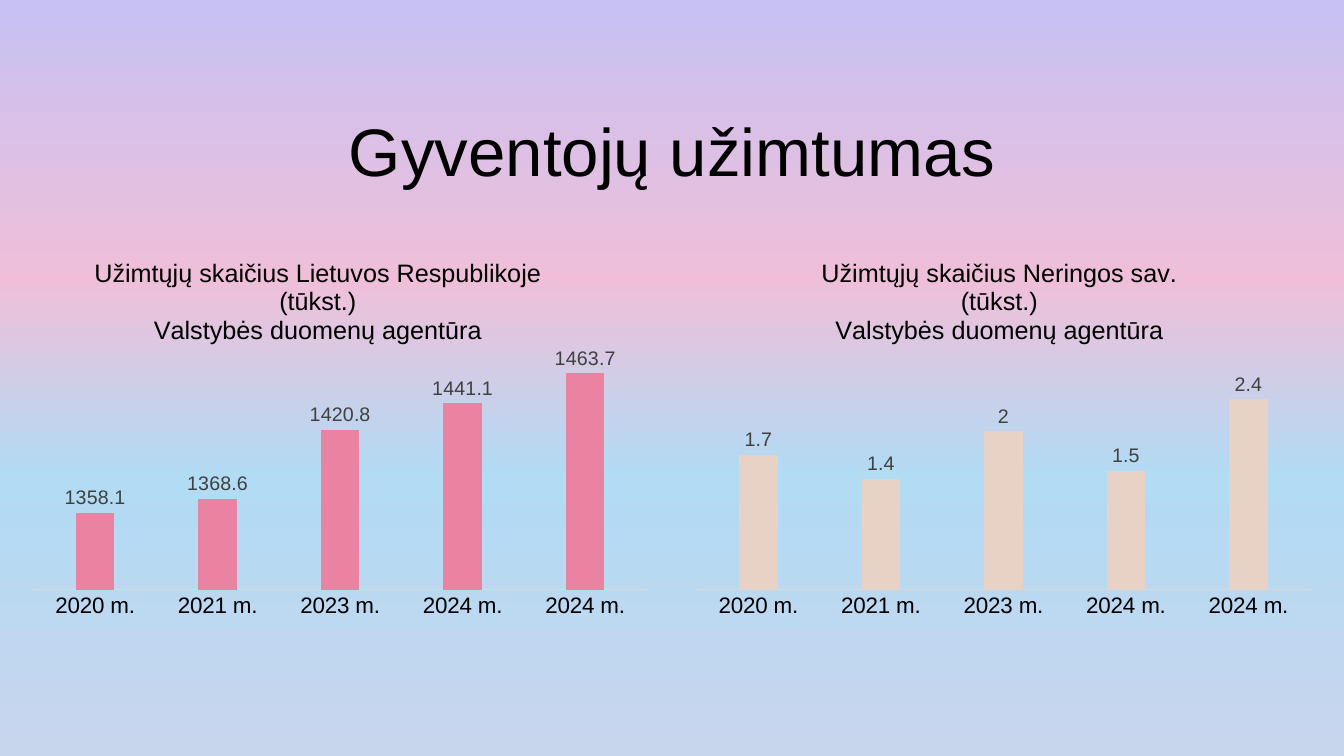
from dataclasses import dataclass

from lxml import etree
from pptx import Presentation
from pptx.chart.data import CategoryChartData
from pptx.dml.color import RGBColor
from pptx.enum.chart import XL_CHART_TYPE, XL_LABEL_POSITION, XL_TICK_MARK
from pptx.enum.text import PP_ALIGN
from pptx.oxml import parse_xml
from pptx.oxml.ns import nsdecls, qn
from pptx.util import Pt

COLUMN = XL_CHART_TYPE.COLUMN_CLUSTERED
OUTSIDE = XL_LABEL_POSITION.OUTSIDE_END
NO_TICK = XL_TICK_MARK.NONE
CENTER = PP_ALIGN.CENTER


@dataclass(frozen=True)
class Theme:
    """Colours, fonts and type sizes of the slide."""
    font: str = "Arial"
    chart_font: str = "Calibri"
    text: str = "000000"
    label: str = "404040"
    axis: str = "D9D9D9"
    pink: str = "EA83A2"
    sand: str = "E8D2C5"
    background: tuple = ((0, "C7C1F4"), (37, "EFBFD9"), (63, "B2DBF4"), (100, "C7D5ED"))
    heading_size: int = 48
    title_size: int = 18
    axis_size: int = 16
    label_size: int = 14
    chart_size: int = 10


T = Theme()
YEARS = ("2020 m.", "2021 m.", "2023 m.", "2024 m.", "2024 m.")
PLOT_BOX = {"x": 0.02, "y": 0.3, "w": 0.96, "h": 0.61}


def set_font(font, size, color=T.text, name=T.font):
    """Set typeface, size and colour without bold."""
    font.name, font.size, font.bold = name, Pt(size), False
    font.color.rgb = RGBColor.from_string(color)


def write(p, text, **fmt):
    """Add formatted centred text to a paragraph."""
    p.alignment = CENTER
    r = p.add_run()
    r.text = text
    set_font(r.font, **fmt)


def set_background(s):
    """Fill the slide with a vertical gradient."""
    fill = s.background.fill
    fill.gradient()
    fill.gradient_angle = 270
    stops = "".join(f'<a:gs pos="{pos * 1000}"><a:srgbClr val="{color}"/></a:gs>'
                    for pos, color in T.background)
    old = next(s.background._cSld.iter(qn("a:gsLst")))
    old.getparent().replace(old, parse_xml(f'<a:gsLst {nsdecls("a")}>{stops}</a:gsLst>'))


def set_layout(parent, index, box, inner=False):
    """Place a chart part by fractions of the chart area."""
    for old in parent.findall(qn("c:layout")):
        parent.remove(old)
    layout = etree.Element(qn("c:layout"))
    manual = etree.SubElement(layout, qn("c:manualLayout"))
    if inner:
        etree.SubElement(manual, qn("c:layoutTarget")).set("val", "inner")
    for key in ("x", "y"):
        etree.SubElement(manual, qn(f"c:{key}Mode")).set("val", "edge")
    for key, value in box.items():
        etree.SubElement(manual, qn(f"c:{key}")).set("val", str(value))
    parent.insert(index, layout)


def add_heading(s, text):
    """Add the slide heading."""
    tf = s.shapes.add_textbox(Pt(75), Pt(68.4), Pt(810), Pt(129.6)).text_frame
    tf.word_wrap = True
    tf.margin_left = tf.margin_right = tf.margin_top = tf.margin_bottom = 0
    p = tf.paragraphs[0]
    p.line_spacing = Pt(67.2)
    write(p, text, size=T.heading_size)


def add_title(chart, lines, x):
    """Add a chart title of several lines."""
    chart.has_title = True
    tf = chart.chart_title.text_frame
    for i, line in enumerate(lines):
        p = tf.paragraphs[0] if i == 0 else tf.add_paragraph()
        write(p, line, size=T.title_size)
    title = chart.chart_title._element
    set_layout(title, 1, {"x": x, "y": 0.05})


def add_columns(s, left, place, values, color, low, high, title_x):
    """Add a column chart of employment in one place."""
    data = CategoryChartData()
    data.categories = YEARS
    data.add_series("Series 1", values)
    chart = s.shapes.add_chart(COLUMN, Pt(left), Pt(167.8), Pt(455.8), Pt(278.6), data).chart
    set_font(chart.font, T.chart_size, name=T.chart_font)
    chart.has_legend = False
    add_title(chart, (f"Užimtųjų skaičius {place}", "(tūkst.)",
                      "Valstybės duomenų agentūra"), title_x)

    axis = chart.value_axis
    axis.visible = axis.has_major_gridlines = False
    axis.minimum_scale, axis.maximum_scale = low, high
    axis = chart.category_axis
    axis.major_tick_mark = axis.minor_tick_mark = NO_TICK
    axis.format.line.color.rgb = RGBColor.from_string(T.axis)
    axis.format.line.width = Pt(0.75)
    set_font(axis.tick_labels.font, T.axis_size)

    plot = chart.plots[0]
    plot.gap_width, plot.overlap, plot.vary_by_categories = 219, -27, False
    fill = plot.series[0].format.fill
    fill.solid()
    fill.fore_color.rgb = RGBColor.from_string(color)
    labels = plot.series[0].data_labels
    labels.show_value, labels.position = True, OUTSIDE
    set_font(labels.font, T.label_size, T.label)
    set_layout(next(chart._chartSpace.iter(qn("c:plotArea"))), 0, PLOT_BOX, inner=True)


def main():
    """Build and save the slide."""
    prs = Presentation()
    prs.slide_width, prs.slide_height = Pt(960), Pt(540)
    s = prs.slides.add_slide(prs.slide_layouts[6])
    set_background(s)
    add_heading(s, "Gyventojų užimtumas")
    add_columns(s, 488.9, "Neringos sav.", (1.7, 1.4, 2, 1.5, 2.4),
                T.sand, 0, 3, 0.21)
    add_columns(s, 15.1, "Lietuvos Respublikoje", (1358.1, 1368.6, 1420.8, 1441.1, 1463.7),
                T.pink, 1300, 1480, 0.11)
    prs.save("out.pptx")


if __name__ == "__main__":
    main()
